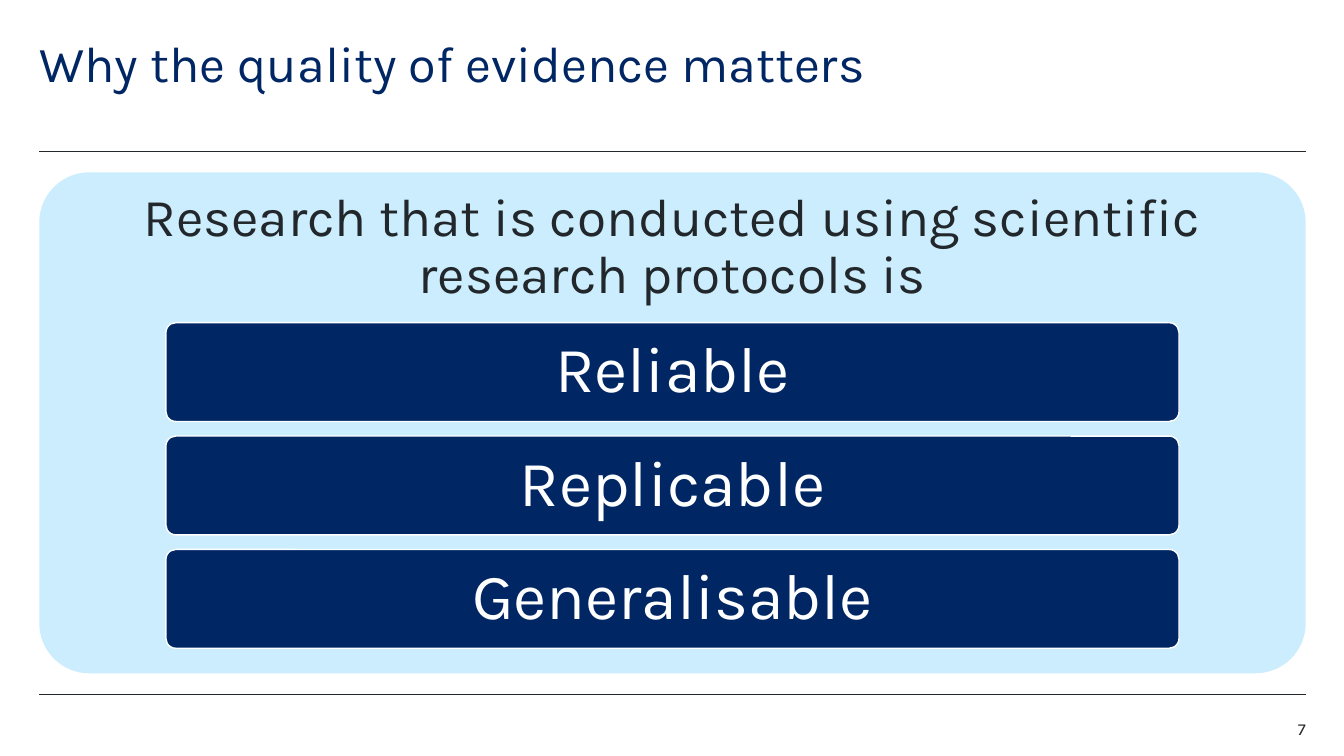
from pptx import Presentation
from pptx.dml.color import RGBColor
from pptx.enum import shapes, text
from pptx import util as u
from lxml import etree

W, H = 13.33, 7.5
LEFT, WIDTH = 0.39, 12.56
NAVY, INK, SKY, WHITE = "002664", "22272B", "CBEDFD", "FFFFFF"
TITLE = "Why the quality of evidence matters"
HEADING = "Research that is conducted using scientific research protocols is"
QUALITIES = ["Reliable", "Replicable", "Generalisable"]
PAGE = "7"
RULES = [1.5, 6.89]
PANEL_TOP, PANEL_H = 1.71, 4.97
HEADING_H = 0.3 * PANEL_H
BAR_W, BAR_H, BAR_STEP = 0.8 * WIDTH, 0.98, 1.125


def rgb(value):
    """Turn a hex string into a colour."""
    return RGBColor.from_string(value)


def write(sp, words, size, color, align="LEFT", anchor="TOP", inset=(0, 0), spacing=0.9):
    """Put one formatted paragraph into a shape."""
    tf = sp.text_frame
    tf.word_wrap = True
    tf.vertical_anchor = getattr(text.MSO_ANCHOR, anchor)
    tf.margin_left = tf.margin_right = u.Inches(inset[0])
    tf.margin_top = tf.margin_bottom = u.Inches(inset[1])
    p = tf.paragraphs[0]
    p.alignment = getattr(text.PP_ALIGN, align)
    p.line_spacing = spacing
    r = p.add_run()
    r.text = words
    r.font.name, r.font.size = "Karla", u.Pt(size)
    r.font.color.rgb = rgb(color)


def add_label(s, box, words, size, color, **fmt):
    """Add a text box."""
    write(s.shapes.add_textbox(*map(u.Inches, box)), words, size, color, **fmt)


def add_rounded(s, box, fill, line=None):
    """Add a rounded rectangle."""
    sp = s.shapes.add_shape(shapes.MSO_SHAPE.ROUNDED_RECTANGLE, *map(u.Inches, box))
    sp.adjustments[0] = 0.1
    sp.shadow.inherit = False
    sp.fill.solid()
    sp.fill.fore_color.rgb = rgb(fill)
    if line:
        sp.line.color.rgb = rgb(line)
        sp.line.width = u.Pt(1)
    else:
        sp.line.fill.background()
    return sp


def add_rule(s, y):
    """Add a thin line across the content width."""
    ends = map(u.Inches, (LEFT, y, LEFT + WIDTH, y))
    c = s.shapes.add_connector(shapes.MSO_CONNECTOR.STRAIGHT, *ends)
    c.line.color.rgb = rgb(INK)
    c.line.width = u.Pt(0.5)
    sp_pr = c._element.spPr
    etree.SubElement(sp_pr, "{%s}effectLst" % sp_pr.nsmap["a"])


def main():
    """Build the slide."""
    prs = Presentation()
    prs.slide_width, prs.slide_height = u.Inches(W), u.Inches(H)
    s = prs.slides.add_slide(prs.slide_layouts[6])
    for y in RULES:
        add_rule(s, y)
    add_label(s, (LEFT, LEFT, 11.02, 1.1), TITLE, 36, NAVY)
    add_label(s, (LEFT + WIDTH - 0.79, 7.13, 0.79, 0.2), PAGE, 12, INK,
              align="RIGHT", spacing=1.0)
    add_rounded(s, (LEFT, PANEL_TOP, WIDTH, PANEL_H), SKY)
    add_label(s, (LEFT, PANEL_TOP, WIDTH, HEADING_H), HEADING, 38, INK,
              align="CENTER", anchor="MIDDLE", inset=(0.16, 0.16))
    bar_left = LEFT + (WIDTH - BAR_W) / 2
    for i, quality in enumerate(QUALITIES):
        top = PANEL_TOP + HEADING_H + i * BAR_STEP
        bar = add_rounded(s, (bar_left, top, BAR_W, BAR_H), NAVY, line=WHITE)
        write(bar, quality, 46, WHITE, align="CENTER", anchor="MIDDLE", inset=(0.13, 0.1))
    prs.save("out.pptx")


if __name__ == "__main__":
    main()
